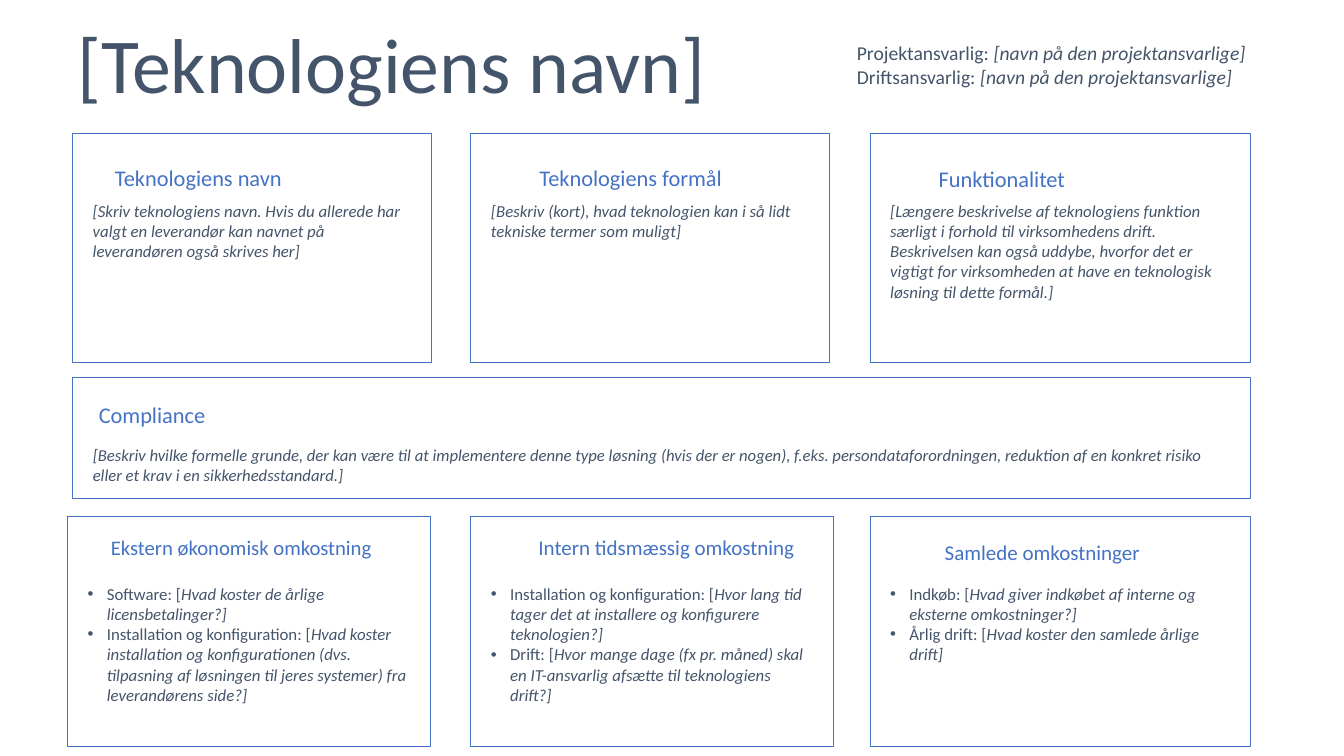
from lxml import etree
from pptx import Presentation
from pptx.dml.color import RGBColor
from pptx.enum import shapes, text
from pptx.oxml.ns import qn
from pptx.util import Inches, Pt

COLOURS = {"accent": "4472C4", "body": "44546A"}
FONT = "Calibri"
INDENT = Inches(0.19)

# left, top, width, height, text size, paragraphs of (plain lead, italic prompt)
PROMPT_CARDS = [
    (0.72, 1.32, 3.56, 2.28, 12, [("", "[Skriv teknologiens navn. Hvis du allerede har valgt en leverandør kan navnet på leverandøren også skrives her]")]),
    (4.67, 1.32, 3.56, 2.28, 12, [("", "[Beskriv (kort), hvad teknologien kan i så lidt tekniske termer som muligt]")]),
    (8.63, 1.32, 3.77, 2.28, 12, [("", "[Længere beskrivelse af teknologiens funktion særligt i forhold til virksomhedens drift. Beskrivelsen kan også uddybe, hvorfor det er vigtigt for virksomheden at have en teknologisk løsning til dette formål.]")]),
    (0.72, 3.74, 11.68, 1.2, 11.9, [("", "[Beskriv hvilke formelle grunde, der kan være til at implementere denne type løsning (hvis der er nogen), f.eks. persondataforordningen, reduktion af en konkret risiko eller et krav i en sikkerhedsstandard.]")]),
]
COST_CARDS = [
    (0.67, 5.12, 3.6, 2.28, 12, [
        ("Software: [", "Hvad koster de årlige licensbetalinger?]"),
        ("Installation og konfiguration: [", "Hvad koster installation og konfigurationen (dvs. tilpasning af løsningen til jeres systemer) fra leverandørens side?]"),
    ]),
    (4.67, 5.12, 3.6, 2.28, 12, [
        ("Installation og konfiguration: [", "Hvor lang tid tager det at installere og konfigurere teknologien?]"),
        ("Drift: [", "Hvor mange dage (fx pr. måned) skal en IT-ansvarlig afsætte til teknologiens drift?]"),
    ]),
    (8.63, 5.12, 3.77, 2.28, 12, [
        ("Indkøb: [", "Hvad giver indkøbet af interne og eksterne omkostninger?]"),
        ("Årlig drift: [", "Hvad koster den samlede årlige drift]"),
    ]),
]
# wording, left, top, width, text size, line spacing, alignment
LEFT, CENTER = text.PP_ALIGN.LEFT, text.PP_ALIGN.CENTER
HEADINGS = [
    ("Teknologiens navn", 1.14, 1.51, 2.72, 16, 28, LEFT),
    ("Teknologiens formål", 5.35, 1.51, 2.72, 16, 28, LEFT),
    ("Funktionalitet", 9.31, 1.52, 2.72, 16, 28, LEFT),
    ("Compliance", 0.98, 3.86, 2.72, 16, 28, LEFT),
    ("Ekstern økonomisk omkostning", 1.1, 5.3, 2.76, 14.8, 18, LEFT),
    ("Intern tidsmæssig omkostning", 5.23, 5.3, 2.76, 15, 18, CENTER),
    ("Samlede omkostninger", 9.37, 5.21, 2.89, 15, 28, LEFT),
]


def set_margins(frame, left, top, right, bottom):
    frame.margin_left, frame.margin_top = Inches(left), Inches(top)
    frame.margin_right, frame.margin_bottom = Inches(right), Inches(bottom)


def add_run(paragraph, wording, size, colour="body", italic=False):
    run = paragraph.add_run()
    run.text = wording
    run.font.name = FONT
    run.font.size = Pt(size)
    run.font.italic = italic
    run.font.color.rgb = RGBColor.from_string(COLOURS[colour])


def add_bullet(paragraph):
    properties = paragraph._p.get_or_add_pPr()
    properties.set("marL", str(INDENT))
    properties.set("indent", str(-INDENT))
    etree.SubElement(properties, qn("a:buFont")).set("typeface", "Arial")
    etree.SubElement(properties, qn("a:buChar")).set("char", "•")


def fill_paragraphs(frame, lines, size, bulleted=False):
    """Write each line as a plain lead followed by an italic prompt."""
    for index, (lead, prompt) in enumerate(lines):
        paragraph = frame.add_paragraph() if index else frame.paragraphs[0]
        paragraph.alignment = LEFT
        if bulleted:
            add_bullet(paragraph)
        if lead:
            add_run(paragraph, lead, size)
        add_run(paragraph, prompt, size, italic=True)


def add_card(slide, left, top, width, height, size, lines, bulleted=False):
    card = slide.shapes.add_shape(
        shapes.MSO_SHAPE.RECTANGLE, Inches(left), Inches(top), Inches(width), Inches(height))
    card.shadow.inherit = False
    card.fill.background()
    card.line.color.rgb = RGBColor.from_string(COLOURS["accent"])
    card.line.width = Pt(0.5)
    frame = card.text_frame
    frame.word_wrap = True
    frame.vertical_anchor = text.MSO_ANCHOR.TOP
    set_margins(frame, 0.2, 0.67, 0.2, 0.2)
    fill_paragraphs(frame, lines, size, bulleted)


def add_text_frame(slide, left, top, width, height):
    box = slide.shapes.add_textbox(Inches(left), Inches(top), Inches(width), Inches(height))
    box.text_frame.word_wrap = True
    return box.text_frame


def add_heading(slide, wording, left, top, width, size, spacing, alignment):
    frame = add_text_frame(slide, left, top, width, 0.44)
    set_margins(frame, 0, 0, 0, 0)
    paragraph = frame.paragraphs[0]
    paragraph.alignment = alignment
    paragraph.line_spacing = Pt(spacing)
    add_run(paragraph, wording, size, "accent")


def add_title(slide):
    frame = add_text_frame(slide, 0.67, 0.29, 8.22, 0.82)
    frame.vertical_anchor = text.MSO_ANCHOR.BOTTOM
    paragraph = frame.paragraphs[0]
    paragraph.line_spacing = 0.7
    add_run(paragraph, "[Teknologiens navn]", 55.5)


def add_owners(slide):
    frame = add_text_frame(slide, 8.4, 0.36, 5.01, 0.57)
    frame.auto_size = text.MSO_AUTO_SIZE.SHAPE_TO_FIT_TEXT
    roles = ("Projektansvarlig: ", "Driftsansvarlig: ")
    fill_paragraphs(frame, [(role, "[navn på den projektansvarlige]") for role in roles], 14)


def main():
    presentation = Presentation()
    presentation.slide_width = Inches(13.33)
    presentation.slide_height = Inches(7.5)
    slide = presentation.slides.add_slide(presentation.slide_layouts[6])
    add_title(slide)
    add_owners(slide)
    for card in PROMPT_CARDS:
        add_card(slide, *card)
    for card in COST_CARDS:
        add_card(slide, *card, bulleted=True)
    for heading in HEADINGS:
        add_heading(slide, *heading)
    presentation.save("out.pptx")


if __name__ == "__main__":
    main()
